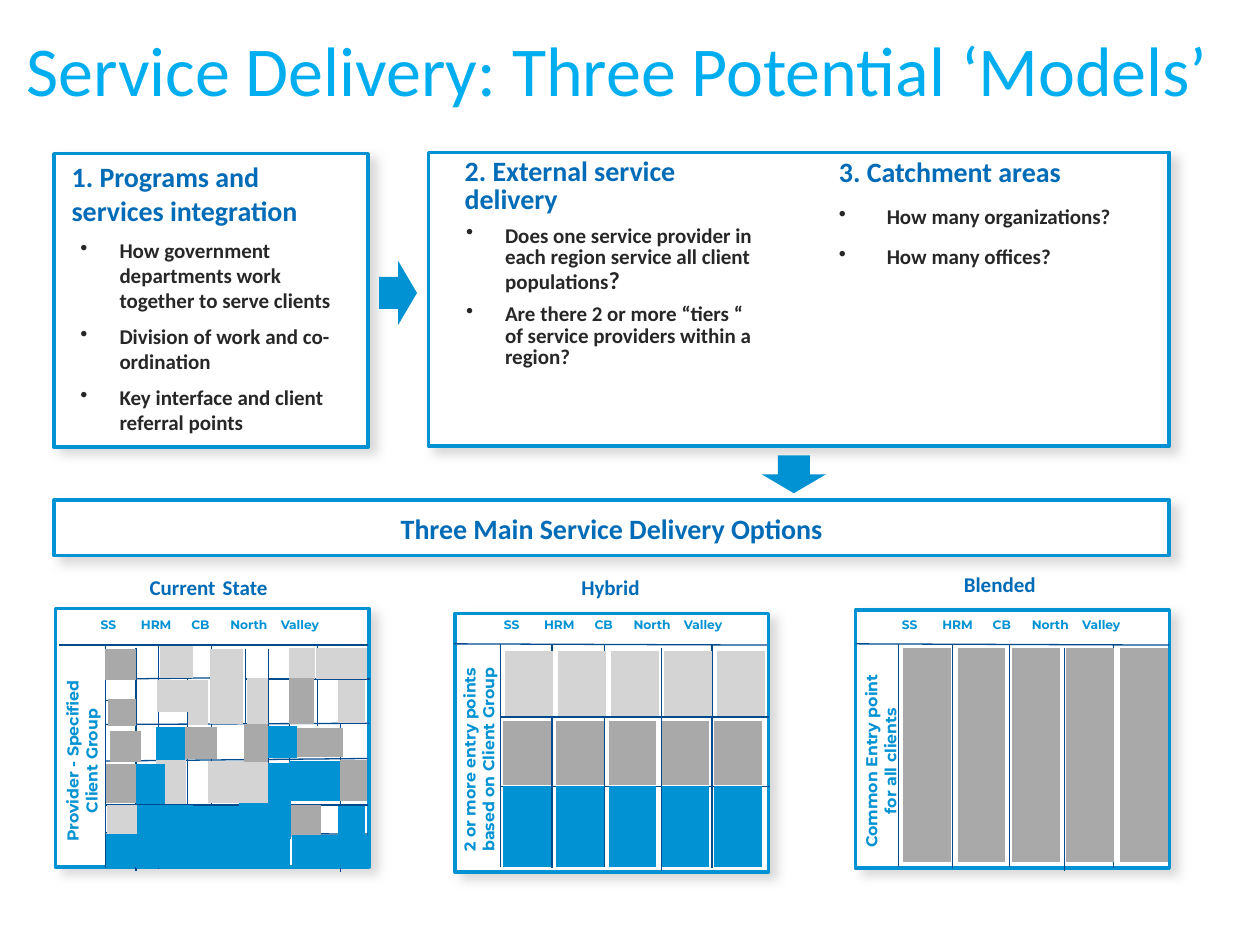
import dataclasses

import pptx
import pptx.dml.color
import pptx.enum.shapes
import pptx.enum.text
import pptx.oxml
import pptx.oxml.ns
import pptx.util

PX = 9144
SHAPES = pptx.enum.shapes.MSO_SHAPE
ALIGN = pptx.enum.text.PP_ALIGN


@dataclasses.dataclass(frozen=True)
class Theme:
    """Colours, fonts and type sizes of the slide."""
    title: str = "00AEEF"
    accent: str = "0092D2"
    heading: str = "006BB6"
    body: str = "272727"
    rule: str = "004B8E"
    light: str = "D4D4D4"
    mid: str = "A9A9A9"
    shadow: str = "D9D9D9"
    paper: str = "FFFFFF"
    font: str = "Calibri"
    grid_font: str = "Montserrat"
    title_size: int = 40
    heading_size: int = 16
    body_size: int = 12
    emphasis_size: int = 14
    gap_size: int = 18
    side_size: int = 9
    region_size: int = 7


THEME = Theme()
REGIONS = "\tSS\tHRM\tCB\tNorth\tValley"
REGION_TABS = (27, 59, 99, 130, 170)

CURRENT_RULES = [
    (47, 512, 292, 512), (84, 575, 293, 574), (84, 639, 292, 639),
    (84, 539, 168, 538), (195, 539, 294, 539), (84, 556, 108, 556),
    (84, 604, 292, 602), (84, 661, 292, 662),
    (84, 512, 84, 689), (108, 514, 108, 691), (126, 513, 126, 690),
    (149, 511, 149, 688), (168, 512, 168, 689), (195, 515, 195, 604),
    (213, 515, 213, 688), (230, 515, 230, 689), (252, 513, 252, 576),
    (253, 638, 253, 688), (270, 514, 270, 692),
]
CURRENT_BLOCKS = {
    THEME.light: [
        (85, 639, 26, 25), (167, 515, 26, 60), (165, 604, 48, 33), (268, 540, 22, 34),
        (127, 513, 26, 25), (149, 540, 16, 35), (251, 514, 21, 25), (196, 538, 17, 37),
        (125, 540, 26, 25), (124, 603, 24, 35), (229, 514, 21, 25), (270, 514, 21, 25),
    ],
    THEME.mid: [
        (86, 555, 22, 21), (84, 606, 26, 31), (230, 639, 25, 25), (147, 577, 25, 25),
        (83, 515, 25, 25), (194, 575, 19, 30), (229, 538, 20, 37), (87, 580, 25, 25),
        (234, 578, 38, 23), (270, 603, 21, 33),
    ],
    THEME.accent: [
        (84, 662, 26, 26), (108, 663, 23, 26), (127, 663, 23, 26), (149, 663, 23, 26),
        (168, 663, 62, 26), (232, 663, 23, 26), (252, 663, 23, 26), (270, 663, 23, 26),
        (109, 639, 23, 26), (130, 639, 23, 26), (148, 640, 23, 26), (170, 640, 23, 26),
        (190, 637, 23, 26), (268, 640, 22, 23), (213, 606, 18, 60), (213, 576, 23, 26),
        (229, 604, 41, 32), (108, 606, 23, 32), (124, 577, 23, 26),
    ],
}
HYBRID_RULES = [
    (360, 511, 609, 512), (397, 569, 610, 569), (397, 624, 611, 624),
    (397, 511, 397, 688), (438, 512, 438, 689), (480, 511, 480, 688),
    (525, 514, 525, 691), (565, 512, 565, 689),
]
HYBRID_TIERS = [
    (THEME.accent, 399, 624, 64), (THEME.mid, 399, 572, 51), (THEME.light, 401, 517, 51),
]
BLENDED_RULES = [
    (679, 511, 928, 512), (713, 511, 713, 688), (756, 512, 756, 689),
    (801, 511, 801, 688), (845, 514, 845, 691), (884, 512, 884, 689),
]


def emu(*lengths):
    """Turn px lengths into EMU."""
    return [length * PX for length in lengths]


def rgb(colour):
    """Turn a hex string into a colour."""
    return pptx.dml.color.RGBColor.from_string(colour)


def write(paragraph, pieces, colour, font=THEME.font, bold=True):
    """Fill a paragraph with (text, size) pieces."""
    paragraph.text = pieces[0][0]
    for text, _ in pieces[1:]:
        paragraph.add_run().text = text
    for run, (_, size) in zip(paragraph.runs, pieces):
        run.font.name, run.font.bold = font, bold
        run.font.size = pptx.util.Pt(size)
        run.font.color.rgb = rgb(colour)


def add_text(slide, box, pieces, colour, font=THEME.font, bold=True, align=ALIGN.LEFT, rotation=0):
    """Add a one-paragraph text box and return its paragraph."""
    holder = slide.shapes.add_textbox(*emu(*box))
    holder.rotation = rotation
    holder.text_frame.word_wrap = True
    paragraph = holder.text_frame.paragraphs[0]
    write(paragraph, pieces, colour, font, bold)
    paragraph.alignment = align
    return paragraph


def add_block(slide, box, colour, kind=SHAPES.FLOWCHART_PROCESS, rotation=0):
    """Add a filled shape without outline."""
    block = slide.shapes.add_shape(kind, *emu(*box))
    block.shadow.inherit = False
    block.rotation = rotation
    block.fill.solid()
    block.fill.fore_color.rgb = rgb(colour)
    block.line.fill.background()
    return block


def add_frame(slide, box):
    """Add an outlined white rectangle with a soft shadow."""
    frame = add_block(slide, box, THEME.paper, SHAPES.RECTANGLE)
    frame.line.color.rgb = rgb(THEME.accent)
    frame.line.width = pptx.util.Pt(2)
    effects = frame.element.spPr.find(pptx.oxml.ns.qn("a:effectLst"))
    effects.append(pptx.oxml.parse_xml(
        f'<a:outerShdw {pptx.oxml.ns.nsdecls("a")} blurRad="76200" dist="63500" '
        f'dir="2280000" algn="tl" rotWithShape="0"><a:srgbClr val="{THEME.shadow}"/></a:outerShdw>'))
    return frame


def add_rules(slide, rules):
    """Add thin grid lines."""
    for ends in rules:
        rule = slide.shapes.add_connector(pptx.enum.shapes.MSO_CONNECTOR.STRAIGHT, *emu(*ends))
        rule.line.color.rgb = rgb(THEME.rule)
        rule.line.width = pptx.util.Pt(0.75)
        pptx.oxml.ns.qn("a:effectLst")
        rule.element.spPr.append(pptx.oxml.parse_xml(f'<a:effectLst {pptx.oxml.ns.nsdecls("a")}/>'))


def add_topic(slide, box, heading, points, indent, hanging, spacing=1.0, before=0):
    """Add a heading followed by bulleted points."""
    size = THEME.body_size
    heading_line = add_text(slide, box, [(heading, THEME.heading_size)], THEME.heading)
    heading_line.line_spacing = spacing
    heading_line.space_after = pptx.util.Pt(6)
    frame = slide.shapes[-1].text_frame
    for pieces in points:
        point = frame.add_paragraph()
        properties = point._p.get_or_add_pPr()
        properties.set("marL", str(indent * PX))
        properties.set("indent", str(-hanging * PX))
        properties.append(pptx.oxml.parse_xml(
            f'<a:buChar {pptx.oxml.ns.nsdecls("a")} char="•"/>'))
        point.line_spacing = spacing
        point.space_before = pptx.util.Pt(before * size)
        point.space_after = pptx.util.Pt(6)
        write(point, pieces, THEME.body)


def add_option(slide, corner, label_box, label, header_left, side_box, side, rules):
    """Add one delivery option: label, frame, grid lines and grid captions."""
    add_frame(slide, (*corner, 249, 205))
    add_text(slide, label_box, label, THEME.heading, align=ALIGN.CENTER)
    add_rules(slide, rules)
    header = add_text(slide, (header_left, 485, 249, 22), [(REGIONS, THEME.region_size)],
                      THEME.accent, THEME.grid_font)
    stops = "".join(f'<a:tab pos="{stop * PX}" algn="l"/>' for stop in REGION_TABS)
    header._p.get_or_add_pPr().append(pptx.oxml.parse_xml(
        f'<a:tabLst {pptx.oxml.ns.nsdecls("a")}>{stops}</a:tabLst>'))
    add_text(slide, side_box, [(side, THEME.side_size)], THEME.accent, THEME.grid_font,
             align=ALIGN.CENTER, rotation=270)


def main():
    """Build and save the slide."""
    deck = pptx.Presentation()
    deck.slide_width, deck.slide_height = emu(1000, 750)
    slide = deck.slides.add_slide(deck.slide_layouts[6])
    size = THEME.body_size

    add_text(slide, (11, 16, 979, 125), [("Service Delivery: Three Potential ‘Models’", THEME.title_size)],
             THEME.title, bold=False)
    add_frame(slide, (43, 122, 249, 233))
    add_frame(slide, (340, 121, 588, 233))
    add_topic(slide, (47, 122, 242, 223), "1. Programs and services integration", [
        [("How government departments work together to serve clients", size)],
        [("Division of work and co-ordination", size)],
        [("Key interface and client referral points", size)]], 38, 31)
    add_topic(slide, (359, 121, 256, 223), "2. External service delivery", [
        [("Does one service provider in each region service all client populations", size),
         ("?", THEME.emphasis_size)],
        [("Are there 2 or more “tiers “ of service providers within a region?", size)]], 32, 31, 0.85)
    add_topic(slide, (656, 122, 240, 223), "3. Catchment areas", [
        [("How many organizations?", size)], [("How many offices?", size)]], 38, 38, 0.85, 0.4)
    add_block(slide, (301, 207, 30, 51), THEME.accent, SHAPES.RIGHT_ARROW)
    add_block(slide, (615, 351, 30, 51), THEME.accent, SHAPES.RIGHT_ARROW, 90)

    banner = add_frame(slide, (43, 397, 885, 44)).text_frame
    banner.vertical_anchor = pptx.enum.text.MSO_ANCHOR.MIDDLE
    write(banner.paragraphs[0], [("Three Main Service Delivery Options", THEME.heading_size)], THEME.heading)
    banner.paragraphs[0].alignment = ALIGN.CENTER

    add_option(slide, (44, 483), (93, 443, 145, 41),
               [("Current", size), (" ", THEME.gap_size), ("State", size)],
               43, (-23, 584, 176, 40), "Provider - Specified Client Group", CURRENT_RULES)
    add_option(slide, (361, 487), (412, 451, 145, 30), [("Hybrid", size)],
               363, (292, 583, 176, 40), "2 or more entry points based on Client Group", HYBRID_RULES)
    add_option(slide, (679, 484), (721, 449, 145, 30), [("Blended", size)],
               679, (611, 584, 176, 40), "Common Entry point for all clients", BLENDED_RULES)

    for colour, boxes in CURRENT_BLOCKS.items():
        for box in boxes:
            add_block(slide, box, colour)
    for region in range(5):
        for colour, left, top, height in HYBRID_TIERS:
            add_block(slide, (left + 42 * region, top, 38, height), colour)
        add_block(slide, (717 + 43 * region, 514, 38, 170), THEME.mid)

    deck.save("out.pptx")


if __name__ == "__main__":
    main()
